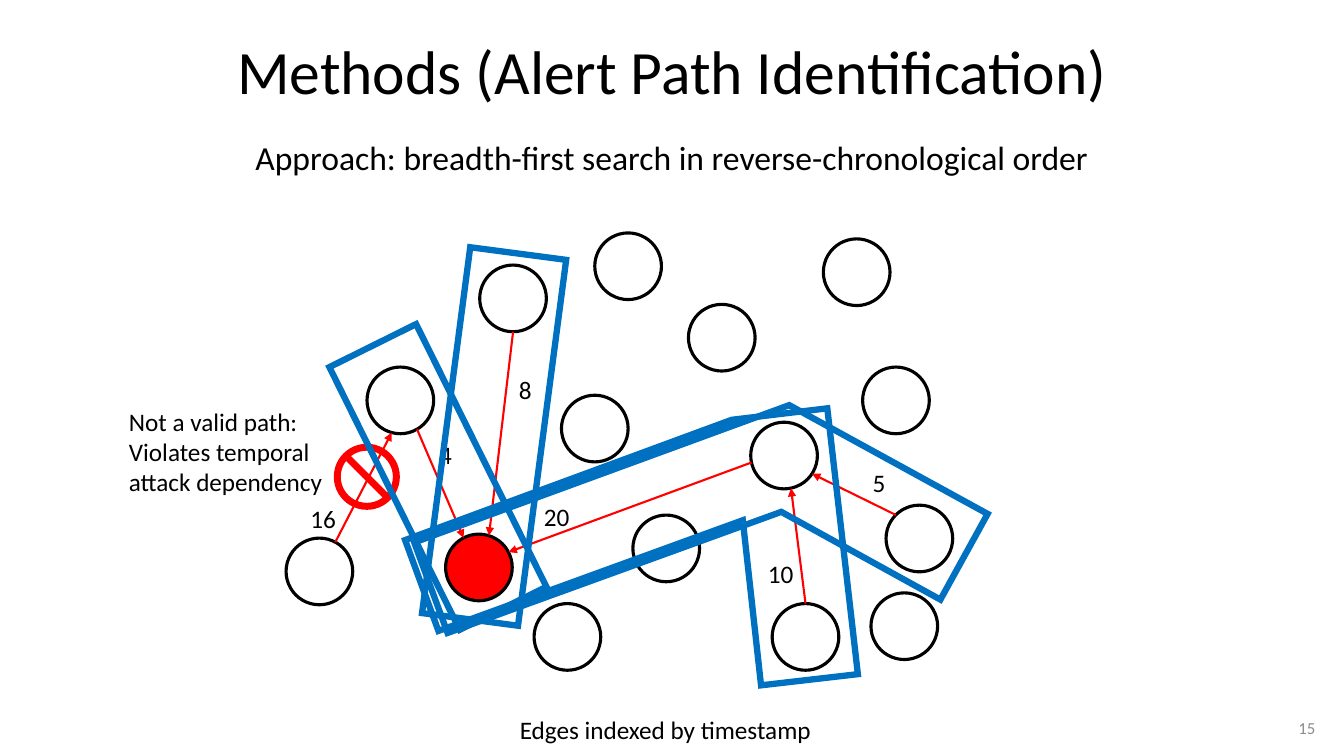
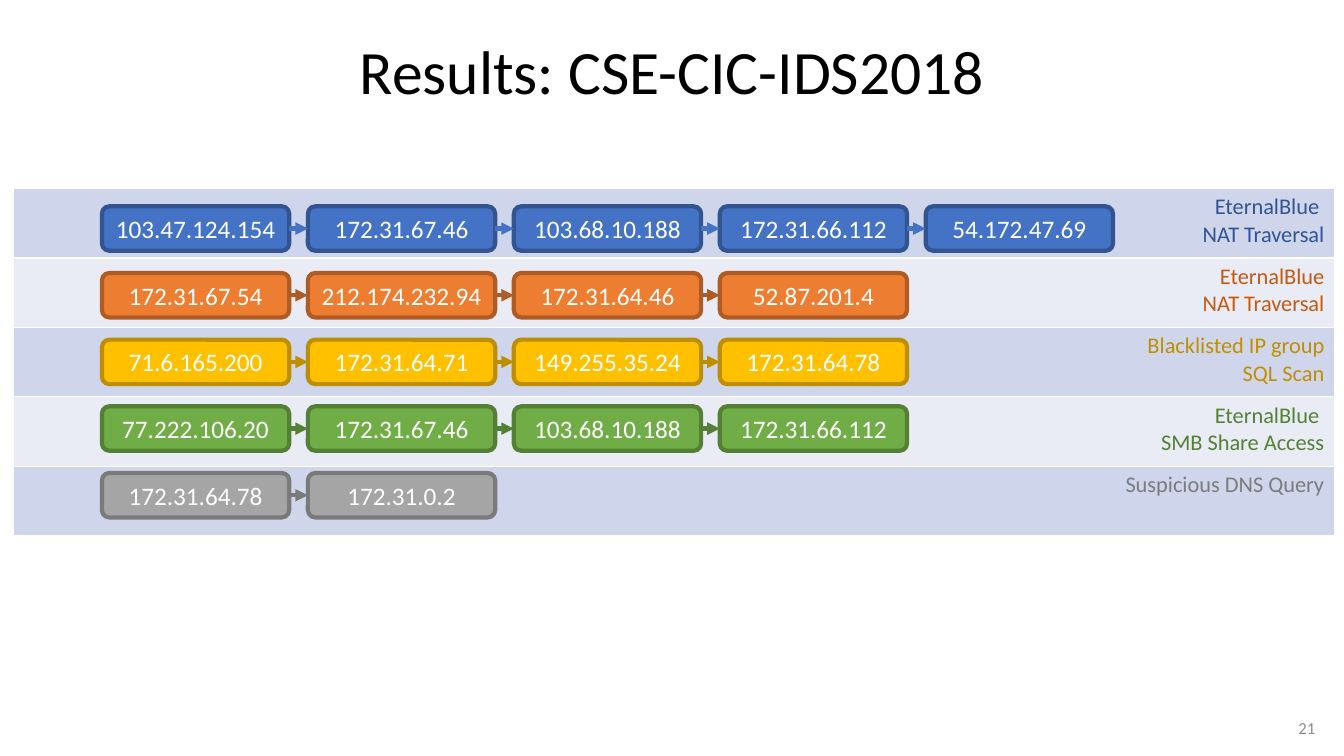
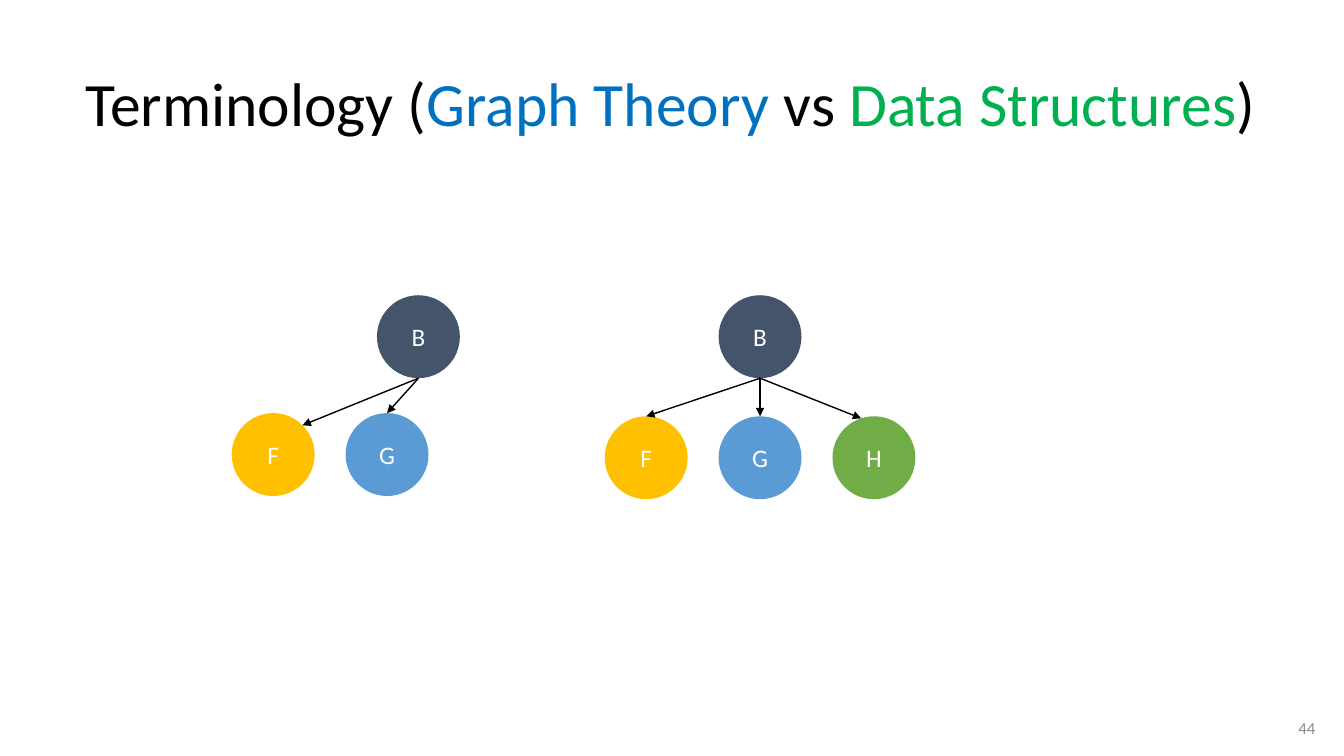
from math import cos, radians, sin

from lxml.etree import SubElement
from pptx import Presentation
from pptx.dml.color import RGBColor
from pptx.enum.shapes import MSO_CONNECTOR, MSO_SHAPE
from pptx.enum.text import MSO_ANCHOR, PP_ALIGN
from pptx.oxml.ns import qn
from pptx.util import Cm, Pt

FONT = "Calibri"
COLORS = {
    "black": "000000", "white": "FFFFFF", "grey": "8C8C8C", "red": "FF0000",
    "frame": "0070C0", "term_green": "00B050",
    "slate": "44546A", "sky": "5B9BD5", "gold": "FFC000", "green": "70AD47",
    "blue": "4472C4", "blue_edge": "325491", "blue_text": "2F5597",
    "orange": "ED7D31", "orange_edge": "AF5C24", "orange_text": "C55A11",
    "gold_edge": "BD8E00", "gold_text": "BF9000",
    "green_edge": "538035", "green_text": "548235",
    "silver": "A5A5A5", "silver_edge": "7A7A7A", "silver_text": "7C7C7C",
    "band_dark": "CFD5EA", "band_light": "E9EBF5",
}
TITLE_BOX = (2.34, 0.03, 29.21, 3.68)

# Alert graph, centres in cm within the graph box
NODE_D = 1.68
NODES = {
    "east": (20.17, 7.77), "n2": (13.79, 8.02), "n3": (19.58, 4.29),
    "hub": (16.76, 5.68), "n5": (19.79, 9.98), "south": (17.3, 10.25),
    "target": (9.07, 8.5), "west": (7.09, 4.29), "invalid": (5.05, 8.6),
    "n10": (11.3, 10.25), "north": (9.93, 1.72), "n12": (11.99, 5),
    "n13": (12.83, 0.91), "n14": (15.19, 2.71), "n15": (18.59, 1.06),
}
# From node and angle, to node and angle, timestamp and its place
EDGES = [
    ("west", 60, "target", -117.5, "4", (7.82, 5.15)),
    ("hub", 168, "target", -27.5, "20", (10.46, 6.7)),
    ("south", -90, "hub", 78, "10", (16.1, 8.14)),
    ("east", -135, "hub", 33, "5", (18.74, 5.86)),
    ("north", 90, "target", -72.5, "8", (9.83, 3.52)),
    ("invalid", -61.5, "west", 105, "16", (4.57, 6.75)),
]
RECT_FRAMES = [(4.34, 5, 7.39, 2.44, 63.6), (4.8, 3.98, 9.3, 2.44, 97.5)]
BENT_FRAMES = [
    [(16.89, 4.41), (21.89, 7.15), (20.7, 9.31), (16.69, 7.1),
     (8.28, 10.15), (7.44, 7.87)],
    [(17.85, 4.49), (18.62, 11.19), (16.18, 11.47), (15.72, 7.31),
     (8.05, 10.1), (7.21, 7.81), (15.44, 4.78)],
]

# Attack paths: fill, edge, arrow and text colours, label, addresses
PATHS = [
    ("blue", "blue_edge", "blue", "blue_text", "EternalBlue \nNAT Traversal",
     ["103.47.124.154", "172.31.67.46", "103.68.10.188", "172.31.66.112",
      "54.172.47.69"]),
    ("orange", "orange_edge", "orange_edge", "orange_text",
     "EternalBlue\nNAT Traversal",
     ["172.31.67.54", "212.174.232.94", "172.31.64.46", "52.87.201.4"]),
    ("gold", "gold_edge", "gold_edge", "gold_text",
     "Blacklisted IP group\nSQL Scan",
     ["71.6.165.200", "172.31.64.71", "149.255.35.24", "172.31.64.78"]),
    ("green", "green_edge", "green_edge", "green_text",
     "EternalBlue \nSMB Share Access",
     ["77.222.106.20", "172.31.67.46", "103.68.10.188", "172.31.66.112"]),
    ("silver", "silver_edge", "silver_edge", "silver_text",
     "Suspicious DNS Query", ["172.31.64.78", "172.31.0.2"]),
]


def rgb(name):
    return RGBColor.from_string(COLORS[name])


def cms(*lengths):
    return [Cm(v) for v in lengths]


def style_run(r, size, color):
    r.font.name, r.font.size = FONT, Pt(size)
    r.font.color.rgb = rgb(color)


def write(tf, text, size=18, color="black", align=PP_ALIGN.LEFT):
    tf.text = text
    for p in tf.paragraphs:
        p.alignment = align
        for r in p.runs:
            style_run(r, size, color)


def add_text(s, box, text, wrap=False, anchor=MSO_ANCHOR.TOP, **style):
    tf = s.shapes.add_textbox(*cms(*box)).text_frame
    tf.word_wrap, tf.vertical_anchor = wrap, anchor
    write(tf, text, **style)
    return tf


def paint(sp, fill=None, line=None, width=1):
    sp.shadow.inherit = False
    if fill:
        sp.fill.solid()
        sp.fill.fore_color.rgb = rgb(fill)
    else:
        sp.fill.background()
    if line:
        sp.line.color.rgb = rgb(line)
        sp.line.width = Pt(width)
    else:
        sp.line.fill.background()


def add_shape(s, kind, box, text="", **look):
    sp = s.shapes.add_shape(kind, *cms(*box))
    paint(sp, **look)
    if text:
        sp.text_frame.vertical_anchor = MSO_ANCHOR.MIDDLE
        write(sp.text_frame, text, color="white", align=PP_ALIGN.CENTER)
    return sp


def add_circle(s, centre, d, text="", **look):
    x, y = centre
    return add_shape(s, MSO_SHAPE.OVAL, (x - d / 2, y - d / 2, d, d), text, **look)


def rim(centre, d, angle):
    """Point on a circle, with the angle clockwise from the right."""
    a = radians(angle)
    return centre[0] + d / 2 * cos(a), centre[1] + d / 2 * sin(a)


def add_arrow(s, start, end, color, width):
    c = s.shapes.add_connector(MSO_CONNECTOR.STRAIGHT, *cms(*start, *end))
    c.line.color.rgb = rgb(color)
    c.line.width = Pt(width)
    spPr = c.element.spPr
    SubElement(spPr.find(qn("a:ln")), qn("a:tailEnd"), type="triangle")
    SubElement(spPr, qn("a:effectLst"))
    return c


def add_slide(prs, title_runs, number, title_box=TITLE_BOX):
    """Blank slide with the shared title and page number."""
    s = prs.slides.add_slide(prs.slide_layouts[6])
    tf = add_text(s, title_box, "", wrap=True, anchor=MSO_ANCHOR.MIDDLE)
    p = tf.paragraphs[0]
    p.alignment, p.line_spacing = PP_ALIGN.CENTER, 0.9
    for text, color in title_runs:
        r = p.add_run()
        r.text = text
        style_run(r, 44, color)
    add_text(s, (25.78, 17.83, 7.62, 1.02), str(number), wrap=True,
             anchor=MSO_ANCHOR.MIDDLE, size=12, color="grey",
             align=PP_ALIGN.RIGHT)
    return s


def add_alert_graph(s, left, top):
    def at(point):
        return left + point[0], top + point[1]

    # Nodes
    for name, centre in NODES.items():
        add_circle(s, at(centre), NODE_D, line="black", width=2.25,
                   fill="red" if name == "target" else "white")
    # Edges and timestamps
    for a, a_angle, b, b_angle, stamp, place in EDGES:
        add_arrow(s, rim(at(NODES[a]), NODE_D, a_angle),
                  rim(at(NODES[b]), NODE_D, b_angle), "red", 1.5)
        add_text(s, (*at(place), 0.84 if len(stamp) == 1 else 1.17, 1.02), stamp)
    # Invalid path
    sign = add_shape(s, MSO_SHAPE.NO_SYMBOL, (*at((5.43, 5.4)), 1.63, 1.63),
                     fill="red", line="red")
    sign.adjustments[0] = 0.086
    add_text(s, (*at((0, 4.31)), 5.46, 2.57),
             "Not a valid path:\nViolates temporal\nattack dependency")
    # Frames around the valid paths
    frames = []
    for x, y, w, h, angle in RECT_FRAMES:
        sp = s.shapes.add_shape(MSO_SHAPE.RECTANGLE, *cms(*at((x, y)), w, h))
        sp.rotation = angle
        frames.append(sp)
    for outline in BENT_FRAMES:
        points = [cms(*at(point)) for point in outline]
        fb = s.shapes.build_freeform(*points[0])
        fb.add_line_segments(points[1:], close=True)
        frames.append(fb.convert_to_shape())
    for sp in frames:
        paint(sp, line="frame", width=4.5)
        SubElement(sp.element.spPr.find(qn("a:ln")), qn("a:miter"), lim="800000")


def add_path_table(s, left, top, width, row_h):
    frame = s.shapes.add_table(len(PATHS), 1,
                               *cms(left, top, width, row_h * len(PATHS)))
    table = frame.table
    table.first_row = table.horz_banding = False
    for i, (_, _, _, color, label, _) in enumerate(PATHS):
        table.rows[i].height = Cm(row_h)
        cell = table.cell(i, 0)
        write(cell.text_frame, label, 16, color, PP_ALIGN.RIGHT)
        tcPr = cell._tc.get_or_add_tcPr()
        for side in ("lnL", "lnR", "lnT", "lnB"):
            ln = SubElement(tcPr, qn("a:" + side), w=str(Pt(1)))
            fill = SubElement(ln, qn("a:solidFill"))
            SubElement(fill, qn("a:srgbClr"), val=COLORS["white"])
        cell.fill.solid()
        cell.fill.fore_color.rgb = rgb("band_light" if i % 2 else "band_dark")


def add_path_chains(s, left, top, step_x=5.19, step_y=1.68):
    for i, (fill, edge, arrow, _, _, addresses) in enumerate(PATHS):
        y = top + i * step_y
        prev = None
        for j, address in enumerate(addresses):
            x = left + j * step_x
            host = add_shape(s, MSO_SHAPE.ROUNDED_RECTANGLE, (x, y, 4.72, 1.12),
                             address, fill=fill, line=edge, width=3)
            if prev:
                c = add_arrow(s, (x, y), (x, y), arrow, 3)
                c.begin_connect(prev, 3)
                c.end_connect(host, 1)
            prev = host


def add_tree(s, left, top, root_x, drop, leaves, d=2.09, step=2.87):
    """Root B over a row of leaves: name, colour, angle where the arrow ends."""
    root = (left + root_x + d / 2, top + d / 2)
    add_circle(s, root, d, "B", fill="slate")
    for i, (name, color, angle) in enumerate(leaves):
        leaf = (left + i * step + d / 2, top + drop + d / 2)
        add_circle(s, leaf, d, name, fill=color)
        add_arrow(s, rim(root, d, 90), rim(leaf, d, angle), "black", 1)


def main():
    prs = Presentation()
    prs.slide_width, prs.slide_height = cms(33.87, 19.05)

    # Alert path identification
    s = add_slide(prs, [("Methods (Alert Path Identification)", "black")], 15)
    add_text(s, (6.07, 3.33, 21.72, 1.27),
             "Approach: breadth-first search in reverse-chronological order",
             size=24, align=PP_ALIGN.CENTER)
    add_alert_graph(s, 3, 5.8)
    add_text(s, (12.85, 17.88, 8.15, 1.02), "Edges indexed by timestamp")

    # Results
    s = add_slide(prs, [("Results: CSE-CIC-IDS2018", "black")], 21)
    add_path_table(s, 0.33, 4.75, 33.3, 1.75)
    add_path_chains(s, 2.57, 5.2)

    # Terminology
    s = add_slide(prs, [("Terminology (", "black"), ("Graph Theory ", "frame"),
                        ("vs ", "black"), ("Data Structures", "term_green"),
                        (")", "black")], 44, (1.8, 0.85, 30.2, 3.68))
    add_tree(s, 5.84, 7.44, 3.66, 2.97,
             [("F", "gold", -45), ("G", "sky", -90)])
    add_tree(s, 15.24, 7.44, 2.87, 3.05,
             [("F", "gold", -90), ("G", "sky", -90), ("H", "green", -108)])

    prs.save("out.pptx")


if __name__ == "__main__":
    main()
